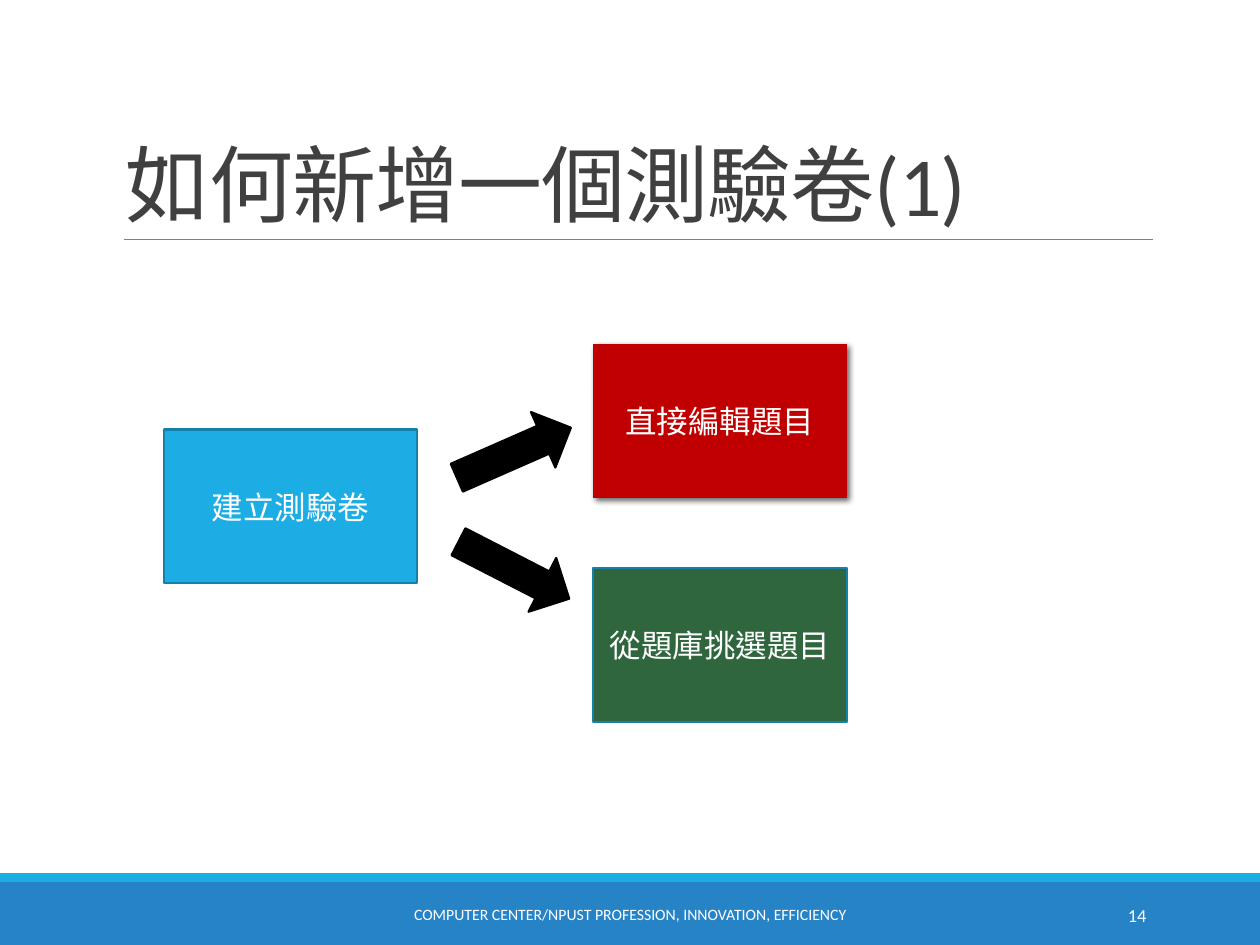
from dataclasses import dataclass

from lxml.etree import SubElement
from pptx import Presentation
from pptx.dml.color import RGBColor
from pptx.enum.lang import MSO_LANGUAGE_ID as Language
from pptx.enum.shapes import MSO_CONNECTOR as Connector, MSO_SHAPE as Shape
from pptx.enum.text import MSO_ANCHOR as Anchor, PP_ALIGN as Align
from pptx.oxml.ns import qn
from pptx.util import Cm, Pt


@dataclass(frozen=True)
class Theme:
    font: str = "Calibri"
    title: str = "404040"
    rule: str = "808080"
    band: str = "2683C6"
    accent: str = "1CADE4"
    outline: str = "1580A9"
    red: str = "C00000"
    green: str = "2F663E"
    black: str = "000000"
    white: str = "FFFFFF"
    title_size: float = 48
    label_size: float = 18
    number_size: float = 10.5
    footer_size: float = 9
    outline_width: float = 1.25
    rule_width: float = 0.5


THEME = Theme()


def rgb(color):
    return RGBColor.from_string(color)


def add_text(shape, text, size, color, align, anchor=Anchor.MIDDLE):
    frame = shape.text_frame
    frame.word_wrap = True
    frame.vertical_anchor = anchor
    paragraph = frame.paragraphs[0]
    paragraph.alignment = align
    run = paragraph.add_run()
    run.text = text
    font = run.font
    font.name, font.size = THEME.font, Pt(size)
    font.color.rgb = rgb(color)
    if not text.isascii():
        font.language_id = Language.TRADITIONAL_CHINESE
    return paragraph, run


def add_block(slide, kind, box, fill, outline=None):
    block = slide.shapes.add_shape(kind, *map(Cm, box))
    block.shadow.inherit = False
    block.fill.solid()
    block.fill.fore_color.rgb = rgb(fill)
    if outline:
        block.line.color.rgb = rgb(outline)
        block.line.width = Pt(THEME.outline_width)
    else:
        block.line.fill.background()
    return block


def cast_shadow(shape):
    effects = shape._element.spPr.find(qn("a:effectLst"))
    shadow = SubElement(effects, qn("a:outerShdw"), blurRad=str(Pt(3.5)),
                        dist=str(Pt(2)), dir=str(45 * 60000), rotWithShape="0")
    color = SubElement(shadow, qn("a:srgbClr"), val=THEME.black)
    SubElement(color, qn("a:alpha"), val="60000")


def add_heading(slide, text, left, top, width, height):
    heading = slide.shapes.add_textbox(*map(Cm, (left, top, width, height)))
    paragraph, run = add_text(heading, text, THEME.title_size, THEME.title,
                              Align.LEFT, Anchor.BOTTOM)
    paragraph.line_spacing = 0.85
    run.font._element.set("spc", "-50")

    # Rule under the title
    bottom = Cm(top + height)
    rule = slide.shapes.add_connector(Connector.STRAIGHT, Cm(left + 0.2), bottom,
                                      Cm(left + width), bottom)
    rule.line.color.rgb = rgb(THEME.rule)
    rule.line.width = Pt(THEME.rule_width)
    SubElement(rule._element.spPr, qn("a:effectLst"))


def add_footer(slide, credo, number, left, top, width, height):
    strip = 0.18
    add_block(slide, Shape.RECTANGLE,
              (left, top + strip, width, height - strip), THEME.band)
    add_block(slide, Shape.RECTANGLE, (left, top, width, strip), THEME.accent)

    # Centred line of text and page number
    for text, offset, span, size, align in (
        (credo, 7.67, 10.06, THEME.footer_size, Align.CENTER),
        (number, 20.62, 2.74, THEME.number_size, Align.RIGHT),
    ):
        field = slide.shapes.add_textbox(Cm(left + offset), Cm(top + 0.33),
                                         Cm(span), Cm(1.02))
        add_text(field, text, size, THEME.white, align)


def add_choices(slide, left, top, width, height):
    step_width, step_height = 5.11, 3.1
    right = left + width - step_width
    lower = top + height - step_height

    # Starting step and its two options
    for text, x, y, fill, outline in (
        ("建立測驗卷", left, top + 1.73, THEME.accent, THEME.outline),
        ("直接編輯題目", right, top, THEME.red, None),
        ("從題庫挑選題目", right, lower, THEME.green, THEME.outline),
    ):
        step = add_block(slide, Shape.FLOWCHART_PROCESS,
                         (x, y, step_width, step_height), fill, outline)
        add_text(step, text, THEME.label_size, THEME.white, Align.CENTER)
        if not outline:
            cast_shadow(step)

    # Arrows from the start to each option
    for offset, rotation in ((0.94, 246.3), (3.31, 297.2)):
        arrow = add_block(slide, Shape.DOWN_ARROW,
                          (left + 6.45, top + offset, 1.22, 2.51),
                          THEME.black, THEME.black)
        arrow.rotation = rotation


def main():
    deck = Presentation()
    deck.slide_width, deck.slide_height = Cm(25.4), Cm(19.05)
    slide = deck.slides.add_slide(deck.slide_layouts[6])
    add_footer(slide, "COMPUTER CENTER/NPUST PROFESSION, INNOVATION, EFFICIENCY",
               "14", 0, 17.6, 25.4, 1.45)
    add_heading(slide, "如何新增一個測驗卷(1)", 2.29, 0.79, 20.96, 4.04)
    add_choices(slide, 3.3, 6.93, 13.77, 7.62)
    deck.save("out.pptx")


if __name__ == "__main__":
    main()
